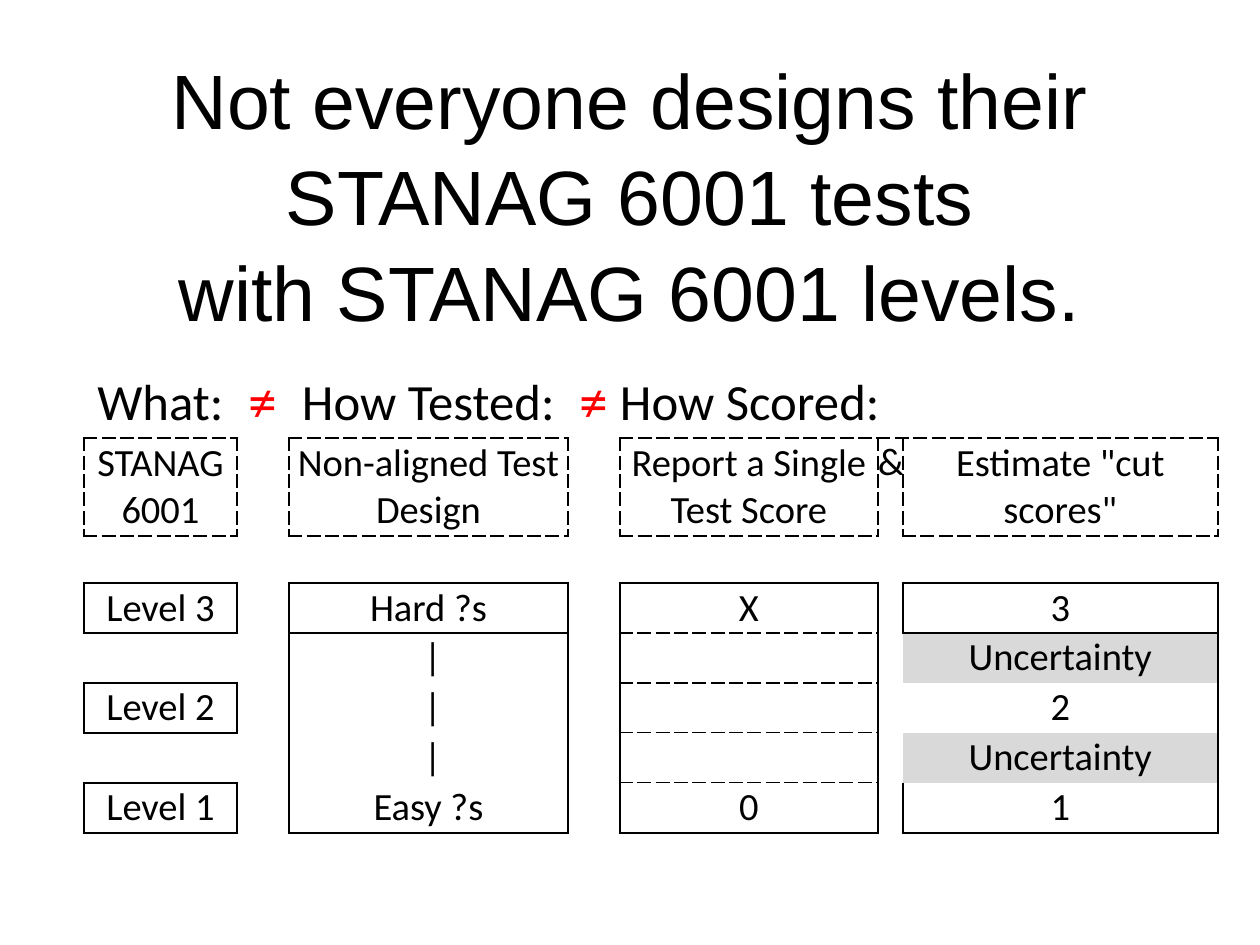
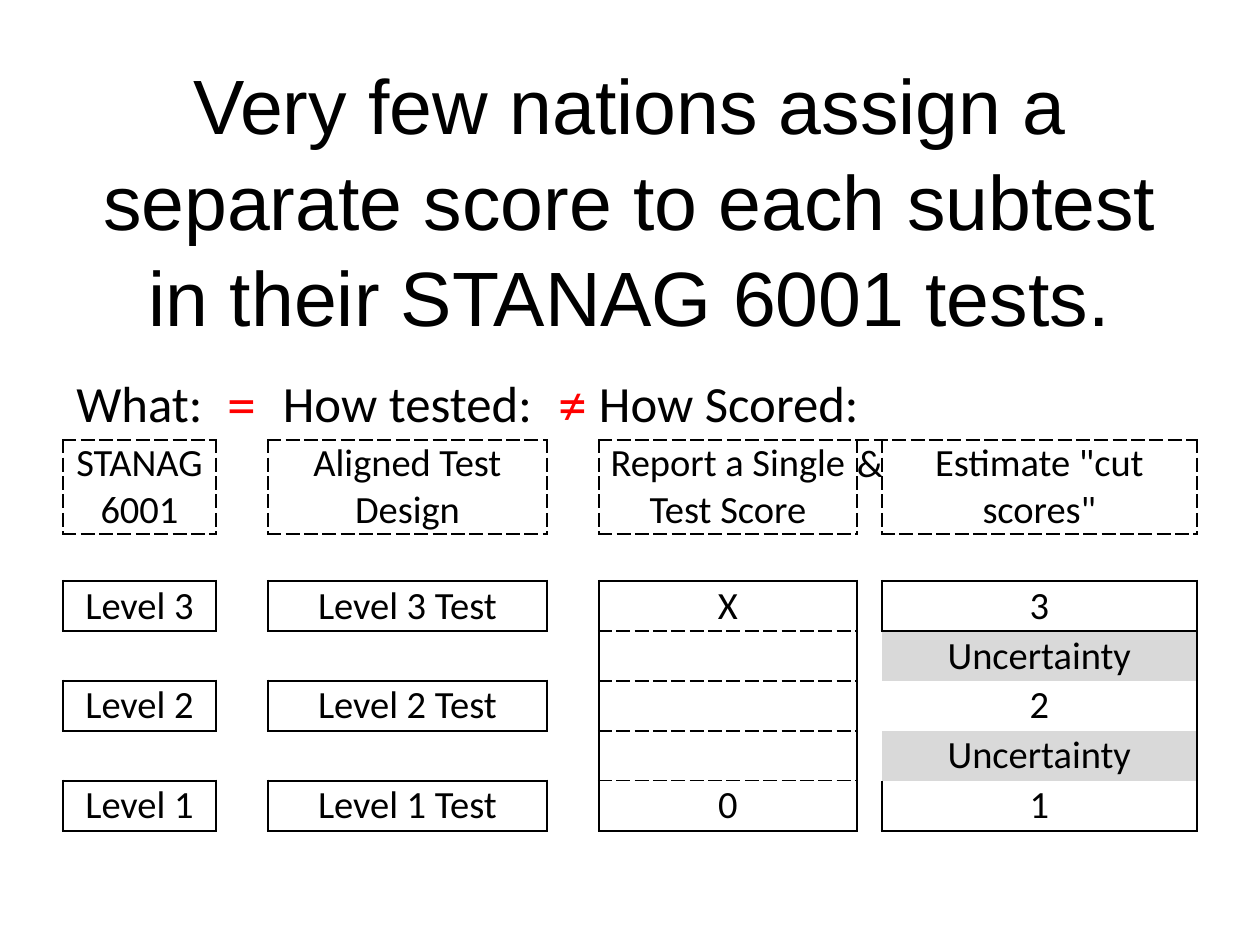
from collections import defaultdict

from lxml import etree
from pptx import Presentation
from pptx import util as u
from pptx.dml.color import RGBColor
from pptx.enum import text as t
from pptx.oxml.ns import qn

PX = 914400 / 126
HUES = {"ink": "000000", "sign": "FF0000", "band": "D9D9D9"}
PLAIN = "{2D5ABB26-0587-4C30-8999-92F81FD0307C}"  # table style: no grid

COLS = [153, 52, 279, 52, 258, 25, 315]
LEVELS = [4, 6, 8]
LAST = 8
STEPS = {"L": (0, -1, "R"), "R": (0, 1, "L"), "T": (-1, 0, "B"), "B": (1, 0, "T")}
LINES = {"solid": (1.5, "solid"), "dash": (1, "dash")}

TITLE = {"size": u.Pt(44), "name": "Arial"}
HEAD = {"size": u.Pt(29), "name": "Calibri"}
SIGN = {"size": u.Pt(33), "name": "Calibri"}
BODY = {"size": u.Pt(22), "name": "Calibri"}
FLUSH = dict.fromkeys(
    ["margin_left", "margin_top", "margin_right", "margin_bottom"], 0)


def px(num):
    return u.Emu(round(num * PX))


def apply(obj, vals):
    for key, val in vals.items():
        setattr(obj, key, val)


def write(par, words, form, hue="ink", align=t.PP_ALIGN.CENTER):
    """Add the lines of words to a paragraph, with breaks between them."""
    par.alignment = align
    for num, line in enumerate(words.split("\n")):
        if num:
            par.add_line_break()
        run = par.add_run()
        run.text = line
        apply(run.font, form)
        run.font.color.rgb = RGBColor.from_string(HUES[hue])


def add_title(slide, words, high):
    frame = slide.shapes.add_textbox(
        px(63), px(38), px(1134), px(high)).text_frame
    apply(frame, {"word_wrap": True, "vertical_anchor": t.MSO_ANCHOR.MIDDLE})
    par = frame.paragraphs[0]
    par.line_spacing = 1.04
    write(par, words, TITLE)


def add_grid(slide, left, top, rows):
    frame = slide.shapes.add_table(
        len(rows), len(COLS), px(left), px(top), px(sum(COLS)), px(sum(rows)))
    grid = frame.table
    apply(grid, {"first_row": False, "horz_banding": False})
    grid._tbl.tblPr.find(qn("a:tableStyleId")).text = PLAIN
    for col, wide in zip(grid.columns, COLS):
        col.width = px(wide)
    for row, high in zip(grid.rows, rows):
        row.height = px(high)
    for cell in grid.iter_cells():
        apply(cell, {**FLUSH, "vertical_anchor": t.MSO_ANCHOR.MIDDLE})
    grid.cell(0, 4).merge(grid.cell(0, 6))
    for col in range(0, len(COLS), 2):
        grid.cell(1, col).merge(grid.cell(2, col))
    return grid


def box(rules, col, first, last, kind="solid", sides="LRTB"):
    """Note the outline of a run of cells, on both sides of each edge."""
    for row in range(first, last + 1):
        for side in sides:
            if (side == "T" and row > first) or (side == "B" and row < last):
                continue
            down, over, back = STEPS[side]
            rules[row, col][side] = kind
            rules[row + down, col + over][back] = kind


def plan(split):
    """Collect the cell edges; split gives each test level its own box."""
    rules = defaultdict(dict)
    for col in range(0, len(COLS), 2):
        box(rules, col, 1, 2, "dash")
    for row in LEVELS:
        box(rules, 0, row, row)
        if split:
            box(rules, 2, row, row)
    if not split:
        box(rules, 2, LEVELS[0], LAST)
    box(rules, 4, LEVELS[0], LAST, sides="LTB")
    box(rules, 6, LEVELS[0], LAST, sides="TRB")
    for row in (LEVELS[0], LAST):
        box(rules, 4, row, row, sides="R")
        box(rules, 6, row, row, sides="L")
    for row in range(LEVELS[0], LAST):
        box(rules, 4, row, row, "dash", "B")
    return rules


def draw(cell, edges):
    props = cell._tc.get_or_add_tcPr()
    for side in "LRTB":
        if side not in edges:
            continue
        wide, dash = LINES[edges[side]]
        line = etree.SubElement(
            props, qn("a:ln" + side), w=str(u.Pt(wide)), cmpd="sng")
        fill = etree.SubElement(line, qn("a:solidFill"))
        etree.SubElement(fill, qn("a:srgbClr"), val=HUES["ink"])
        etree.SubElement(line, qn("a:prstDash"), val=dash)


def fill_grid(grid, heads, signs, test, tasks, split):
    def put(row, col, words, form=BODY, **more):
        write(grid.cell(row, col).text_frame.paragraphs[0], words, form, **more)

    for col, words in zip((0, 2), heads):
        put(0, col, words, HEAD)
    put(0, 4, "How Scored:", HEAD, align=t.PP_ALIGN.LEFT)
    for col, words in zip((1, 3), signs):
        put(0, col, words, SIGN, hue="sign")
    tops = ["STANAG 6001", test, "Report a Single Test Score",
            'Estimate "cut scores"']
    for num, words in enumerate(tops):
        put(1, 2 * num, words)
    put(1, 5, "&")
    for row, level in zip(LEVELS, "321"):
        put(row, 0, f"Level {level}")
        put(row, 6, level)
    for row, words in tasks.items():
        put(row, 2, words)
    put(LEVELS[0], 4, "X")
    put(LAST, 4, "0")

    gaps = [row + 1 for row in LEVELS[:-1]]
    for row in gaps:
        put(row, 6, "Uncertainty")

    rules = plan(split)
    for row in range(len(grid.rows)):
        for col in range(len(COLS)):
            cell = grid.cell(row, col)
            draw(cell, rules[row, col])
            if col == 6 and row in gaps:
                cell.fill.solid()
                cell.fill.fore_color.rgb = RGBColor.from_string(HUES["band"])
            else:
                cell.fill.background()


def main():
    deck = Presentation()
    apply(deck, {"slide_width": px(1260), "slide_height": px(945)})
    blank = deck.slide_layouts[6]

    slide = deck.slides.add_slide(blank)
    add_title(slide, "Not everyone designs their STANAG 6001 tests\n"
              "with STANAG 6001 levels.", 309)
    grid = add_grid(slide, 84, 368, [70, 49, 49, 47] + [50] * 5)
    tasks = {4: "Hard ?s", **dict.fromkeys((5, 6, 7), " |"), 8: "Easy ?s"}
    fill_grid(grid, ["What:", "How Tested:"], "≠≠",
              "Non-aligned Test Design", tasks, False)

    slide = deck.slides.add_slide(blank)
    add_title(slide, "Very few nations assign a separate score to each "
              "subtest in their STANAG 6001 tests.", 319)
    grid = add_grid(slide, 63, 370, [70, 49, 45, 47] + [50] * 5)
    tasks = {row: f"Level {num} Test" for row, num in zip(LEVELS, "321")}
    fill_grid(grid, ["What:", "How tested:"], "=≠",
              "Aligned Test Design", tasks, True)

    deck.save("out.pptx")


if __name__ == "__main__":
    main()
